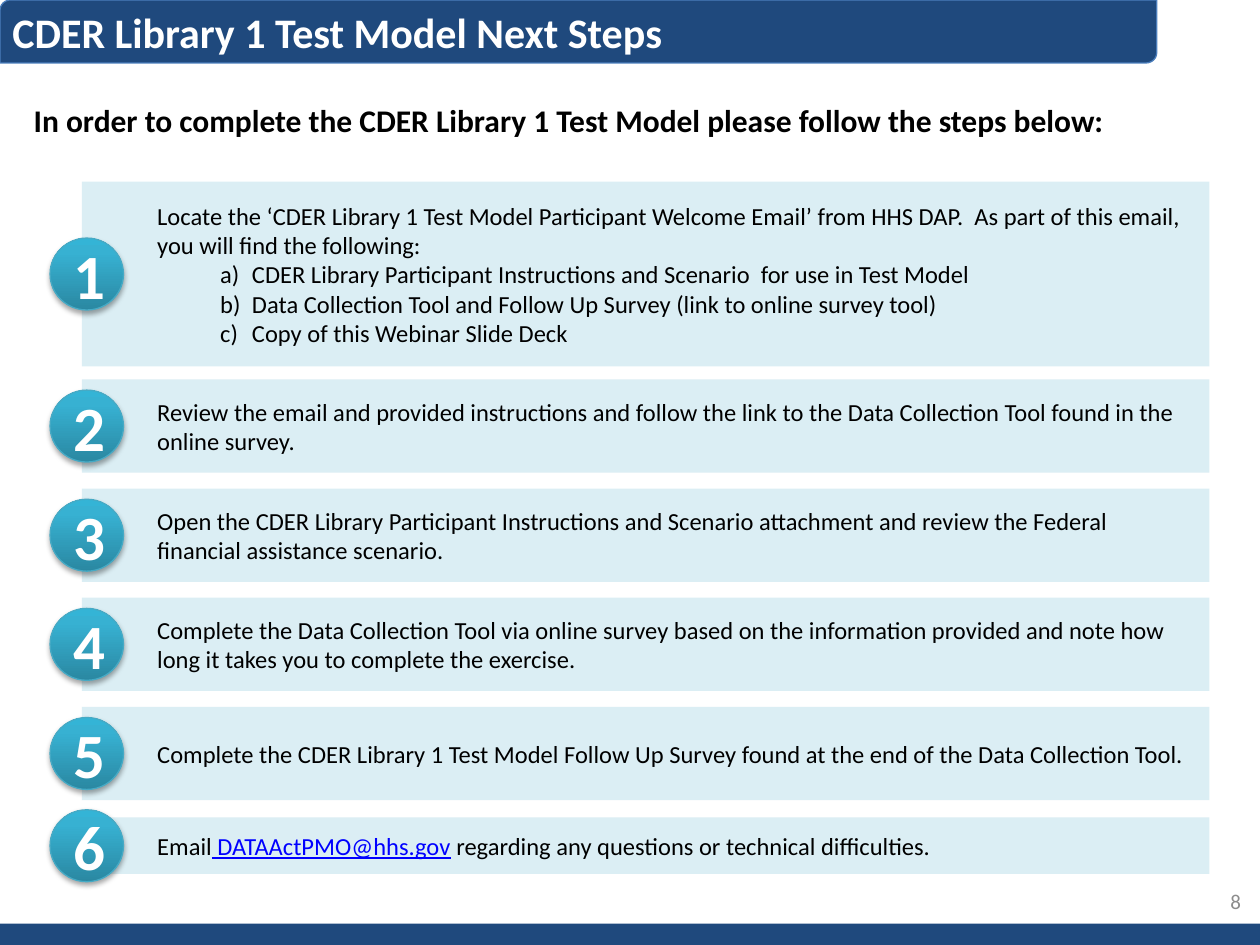
from lxml import etree
from pptx import Presentation
from pptx.dml.color import RGBColor
from pptx.enum import shapes, text
from pptx.oxml.ns import qn
from pptx.util import Cm, Pt

NAVY, PALE, BLACK, WHITE = "1F497D", "DBEEF4", "000000", "FFFFFF"
KIND, ALIGN, ANCHOR = shapes.MSO_SHAPE, text.PP_ALIGN, text.MSO_ANCHOR
TALL, GAP = 1.88, 0.32
STEPS = [  # top, height, paragraphs
    (3.66, 3.73, [
        "Locate the ‘CDER Library 1 Test Model Participant Welcome Email’ from HHS DAP.  "
        "As part of this email, you will find the following:",
        "CDER Library Participant Instructions and Scenario  for use in Test Model",
        "Data Collection Tool and Follow Up Survey (link to online survey tool)",
        "Copy of this Webinar Slide Deck"]),
    *[(7.65 + i * (TALL + GAP), TALL, [line]) for i, line in enumerate([
        "Review the email and provided instructions and follow the link to the Data "
        "Collection Tool found in the online survey.",
        "Open the CDER Library Participant Instructions and Scenario attachment and "
        "review the Federal financial assistance scenario.",
        "Complete the Data Collection Tool via online survey based on the information "
        "provided and note how long it takes you to complete the exercise.",
        "Complete the CDER Library 1 Test Model Follow Up Survey found at the end of "
        "the Data Collection Tool."])],
    (16.48, 1.14, [("Email", " DATAActPMO@hhs.gov",
                    " regarding any questions or technical difficulties.")]),
]


def rgb(code):
    return RGBColor.from_string(code)


def style(para, size, color, bold=False, align=ALIGN.LEFT):
    para.alignment = align
    font = para.font
    font.name, font.size, font.bold = "Calibri", Pt(size), bold
    font.color.rgb = rgb(color)


def add_shape(slide, kind, box, fill, line=None):
    shape = slide.shapes.add_shape(kind, *map(Cm, box))
    shape.shadow.inherit = False
    shape.fill.solid()
    shape.fill.fore_color.rgb = rgb(fill)
    if line:
        shape.line.color.rgb = rgb(line)
        shape.line.width = Pt(0.75)
    else:
        shape.line.fill.background()
    shape.text_frame.vertical_anchor = ANCHOR.MIDDLE
    return shape


def add_label(slide, box, words, size, color, bold=True, align=ALIGN.LEFT,
              anchor=ANCHOR.TOP):
    frame = slide.shapes.add_textbox(*map(Cm, box)).text_frame
    frame.word_wrap = True
    frame.vertical_anchor = anchor
    frame.text = words
    style(frame.paragraphs[0], size, color, bold, align)


def indent(para, left, hang=0, letter=False):
    """Set the indents and, if asked, a), b), c) numbering."""
    props = para._p.get_or_add_pPr()
    props.set("marL", str(Cm(left)))
    props.set("indent", str(Cm(hang)))
    if letter:
        etree.SubElement(props, qn("a:buAutoNum"), type="alphaLcParenR")


def add_step(slide, top, height, lines):
    frame = add_shape(slide, KIND.RECTANGLE, (1.65, top, 22.73, height), PALE).text_frame
    frame.word_wrap = True
    for i, line in enumerate(lines):
        para = frame.add_paragraph() if i else frame.paragraphs[0]
        if i:
            indent(para, 3.18, -0.64, letter=True)
        else:
            indent(para, 1.27)
        style(para, 14, BLACK)
        parts = (line,) if isinstance(line, str) else line
        for j, part in enumerate(parts):
            run = para.add_run()
            run.text = part
            if j == 1:
                run.font.underline = True
                run.font.color.rgb = rgb("0000FF")


def shade(shape):
    """Give a shape the teal gradient and a soft shadow below."""
    shape.fill.gradient()
    shape.fill.gradient_angle = 90
    props = shape._element.spPr
    stops = props.find(".//" + qn("a:gsLst"))
    for stop in list(stops):
        stops.remove(stop)
    for pos, color in ((0, "2A88A2"), (80, "37B1D2"), (100, "34B4D6")):
        stop = etree.SubElement(stops, qn("a:gs"), pos=str(pos * 1000))
        etree.SubElement(stop, qn("a:srgbClr"), val=color)
    cast = etree.SubElement(props.find(qn("a:effectLst")), qn("a:outerShdw"),
                            blurRad=str(Pt(3.1)), dist=str(Pt(1.8)),
                            dir="5400000", rotWithShape="0")
    tint = etree.SubElement(cast, qn("a:srgbClr"), val=BLACK)
    etree.SubElement(tint, qn("a:alpha"), val="35000")


def add_badge(slide, middle, number):
    wide, high = 1.48, 1.45
    badge = add_shape(slide, KIND.OVAL, (1.01, middle - high / 2, wide, high),
                      "37B1D2", "46AAC5")
    shade(badge)
    badge.text_frame.text = str(number)
    style(badge.text_frame.paragraphs[0], 36, WHITE, True, ALIGN.CENTER)


def main():
    deck = Presentation()
    deck.slide_width, deck.slide_height = Cm(25.4), Cm(19.05)
    slide = deck.slides.add_slide(deck.slide_layouts[6])
    add_shape(slide, KIND.RECTANGLE, (0, 18.62, 25.4, 0.43), NAVY)
    add_shape(slide, KIND.ROUND_2_DIAG_RECTANGLE, (0, 0, 23.32, 1.27), NAVY, "4B7EBC")
    add_label(slide, (19.35, 17.65, 5.92, 1.02), "8", 12, "8C8C8C", False,
              ALIGN.RIGHT, ANCHOR.MIDDLE)
    add_label(slide, (0, 0, 22.02, 1.27), "CDER Library 1 Test Model Next Steps", 24, WHITE)
    add_label(slide, (0.43, 1.91, 23.34, 1.02),
              "In order to complete the CDER Library 1 Test Model please follow "
              "the steps below:", 18, BLACK)
    for top, height, lines in STEPS:
        add_step(slide, top, height, lines)
    for number, (top, height, _) in enumerate(STEPS, 1):
        add_badge(slide, top + height / 2, number)
    deck.save("out.pptx")


if __name__ == "__main__":
    main()
